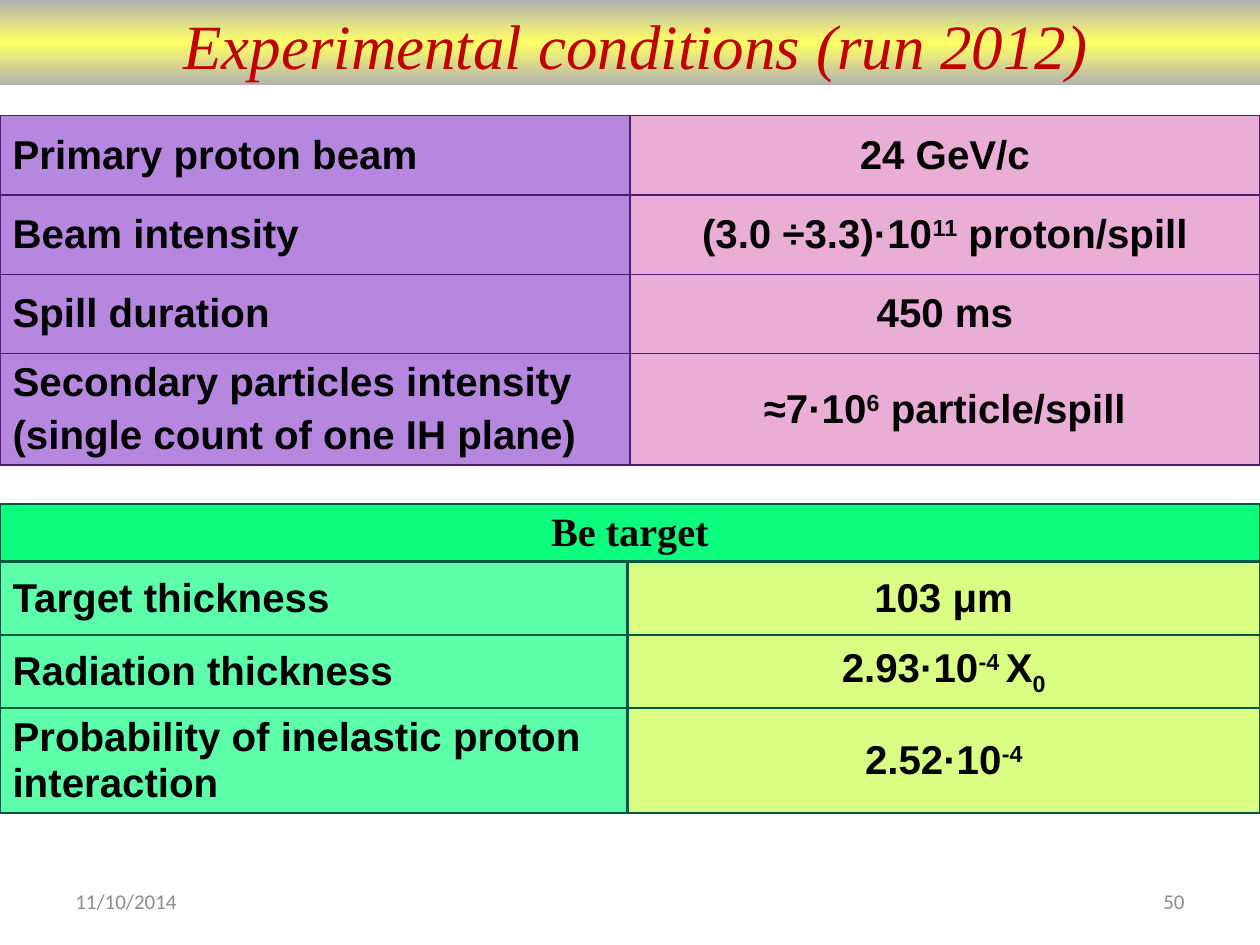
from copy import deepcopy

from lxml import etree
from pptx import Presentation
from pptx import util as u
from pptx.dml.color import RGBColor
from pptx.enum import shapes, text
from pptx.oxml import ns

BLACK = RGBColor(0x00, 0x00, 0x00)
RED = RGBColor(0xC0, 0x00, 0x00)
FOOTER_GREY = RGBColor(0x8C, 0x8C, 0x8C)
BAND_GREY = RGBColor(0xB2, 0xB2, 0xB2)
BAND_YELLOW = RGBColor(0xFF, 0xFF, 0x66)
PURPLE = RGBColor(0xB5, 0x87, 0xDF)
PINK = RGBColor(0xEA, 0xAE, 0xD6)
DARK_PURPLE = RGBColor(0x4A, 0x1E, 0x72)
BRIGHT_GREEN = RGBColor(0x0D, 0xFD, 0x7F)
MINT = RGBColor(0x5C, 0xFE, 0xA9)
LIME = RGBColor(0xDA, 0xFD, 0x83)
DARK_GREEN = RGBColor(0x00, 0x58, 0x41)

LEFT, CENTER, RIGHT = text.PP_ALIGN.LEFT, text.PP_ALIGN.CENTER, text.PP_ALIGN.RIGHT
SUPER, SUB = 30, -25  # baseline shift in percent

# Each value is a list of (text, baseline) runs
BEAM_ROWS = [
    (["Primary proton beam"], [("24 GeV/c", 0)]),
    (["Beam intensity"],
     [("(3.0 ÷3.3)·10", 0), ("11", SUPER), (" proton/spill", 0)]),
    (["Spill duration"], [("450 ms", 0)]),
    (["Secondary particles intensity", "(single count of one IH plane)"],
     [("≈7·10", 0), ("6", SUPER), (" particle/spill", 0)]),
]
TARGET_ROWS = [
    (["Target thickness"], [("103 μm", 0)]),
    (["Radiation thickness"],
     [("2.93·10", 0), ("-4 ", SUPER), ("X", 0), ("0", SUB)]),
    (["Probability of inelastic proton interaction"],
     [("2.52·10", 0), ("-4", SUPER)]),
]


def add_run(paragraph, words, size, font_name, color, bold=False, italic=False, baseline=0):
    run = paragraph.add_run()
    run.text = words
    font = run.font
    font.size, font.name = u.Pt(size), font_name
    font.bold, font.italic = bold, italic
    font.color.rgb = color
    if baseline:
        run._r.get_or_add_rPr().set("baseline", str(baseline * 1000))


def set_borders(cell, color, width):
    properties = cell._tc.get_or_add_tcPr()
    for position, side in enumerate(("lnL", "lnR", "lnT", "lnB")):
        line = etree.Element(ns.qn(f"a:{side}"), w=str(u.Pt(width)))
        fill = etree.SubElement(line, ns.qn("a:solidFill"))
        etree.SubElement(fill, ns.qn("a:srgbClr"), val=str(color))
        properties.insert(position, line)


def fill_cell(cell, paragraphs, color, alignment, font_name="Arial"):
    cell.fill.solid()
    cell.fill.fore_color.rgb = color
    cell.vertical_anchor = text.MSO_ANCHOR.MIDDLE
    frame = cell.text_frame
    for index, runs in enumerate(paragraphs):
        paragraph = frame.paragraphs[0]
        if index:
            paragraph = frame.add_paragraph()
            paragraph.space_before = u.Pt(4.6)
        paragraph.alignment = alignment
        for words, baseline in runs:
            add_run(paragraph, words, 23, font_name, BLACK, bold=True, baseline=baseline)


def add_table(slide, top, widths, heights, border, border_width):
    table = slide.shapes.add_table(
        len(heights), len(widths), 0, u.Cm(top),
        u.Cm(sum(widths)), u.Cm(sum(heights))).table
    table.first_row = table.horz_banding = False
    for column, width in zip(table.columns, widths):
        column.width = u.Cm(width)
    for row, height in zip(table.rows, heights):
        row.height = u.Cm(height)
    for cell in table.iter_cells():
        set_borders(cell, border, border_width)
    return table


def fill_rows(table, rows, first_row, label_color, value_color):
    for index, (labels, value) in enumerate(rows, first_row):
        fill_cell(table.cell(index, 0), [[(label, 0)] for label in labels],
                  label_color, LEFT)
        fill_cell(table.cell(index, 1), [value], value_color, CENTER)


def add_title(slide, words):
    title = slide.shapes.title
    title.left, title.top = u.Cm(1.7), 0
    title.width, title.height = u.Cm(22.23), u.Cm(1.6)
    frame = title.text_frame
    frame.word_wrap = False
    frame.auto_size = text.MSO_AUTO_SIZE.NONE
    frame.vertical_anchor = text.MSO_ANCHOR.TOP
    paragraph = frame.paragraphs[0]
    paragraph.alignment = CENTER
    add_run(paragraph, words, 36, "Times New Roman", RED, italic=True)


def add_title_band(slide):
    band = slide.shapes.add_shape(
        shapes.MSO_SHAPE.RECTANGLE, u.Cm(-0.02), 0, u.Cm(25.43), u.Cm(1.72))
    band.shadow.inherit = False
    band.line.fill.background()
    band.fill.gradient()
    band.fill.gradient_angle = 90
    # The default gradient has two stops: add a third
    stop_list = next(band.element.iter(ns.qn("a:gsLst")))
    stop_list.append(deepcopy(stop_list[0]))
    colors = (BAND_GREY, BAND_YELLOW, BAND_GREY)
    for index, color in enumerate(colors):
        stop_list[index].set("pos", str(index * 50000))
        for old_color in list(stop_list[index]):
            stop_list[index].remove(old_color)
        etree.SubElement(stop_list[index], ns.qn("a:srgbClr"), val=str(color))
    slide.shapes.title.element.addprevious(band.element)  # behind the title


def add_footer(slide, left, words, alignment):
    box = slide.shapes.add_textbox(u.Cm(left), u.Cm(17.65), u.Cm(5.93), u.Cm(1.02))
    frame = box.text_frame
    frame.word_wrap = True
    frame.vertical_anchor = text.MSO_ANCHOR.MIDDLE
    paragraph = frame.paragraphs[0]
    paragraph.alignment = alignment
    add_run(paragraph, words, 12, "Calibri", FOOTER_GREY)


def main():
    presentation = Presentation()
    presentation.slide_width, presentation.slide_height = u.Cm(25.4), u.Cm(19.05)
    slide = presentation.slides.add_slide(presentation.slide_layouts[5])

    # Title on its gradient band
    add_title(slide, "Experimental conditions (run 2012)")
    add_title_band(slide)

    # Beam table
    beam = add_table(slide, 2.33, [12.7, 12.7], [1.6, 1.6, 1.6, 2.2], DARK_PURPLE, 1)
    fill_rows(beam, BEAM_ROWS, 0, PURPLE, PINK)

    # Target table with a merged heading
    target = add_table(slide, 10.16, [12.65, 12.75], [1.15, 1.48, 1.48, 2.11],
                       DARK_GREEN, 1.5)
    target.cell(0, 0).merge(target.cell(0, 1))
    fill_cell(target.cell(0, 0), [[("Be target", 0)]], BRIGHT_GREEN, CENTER,
              "Times New Roman")
    fill_rows(target, TARGET_ROWS, 1, MINT, LIME)

    # Date and slide number
    add_footer(slide, 1.27, "11/10/2014", LEFT)
    add_footer(slide, 18.2, "50", RIGHT)

    presentation.save("out.pptx")


if __name__ == "__main__":
    main()
